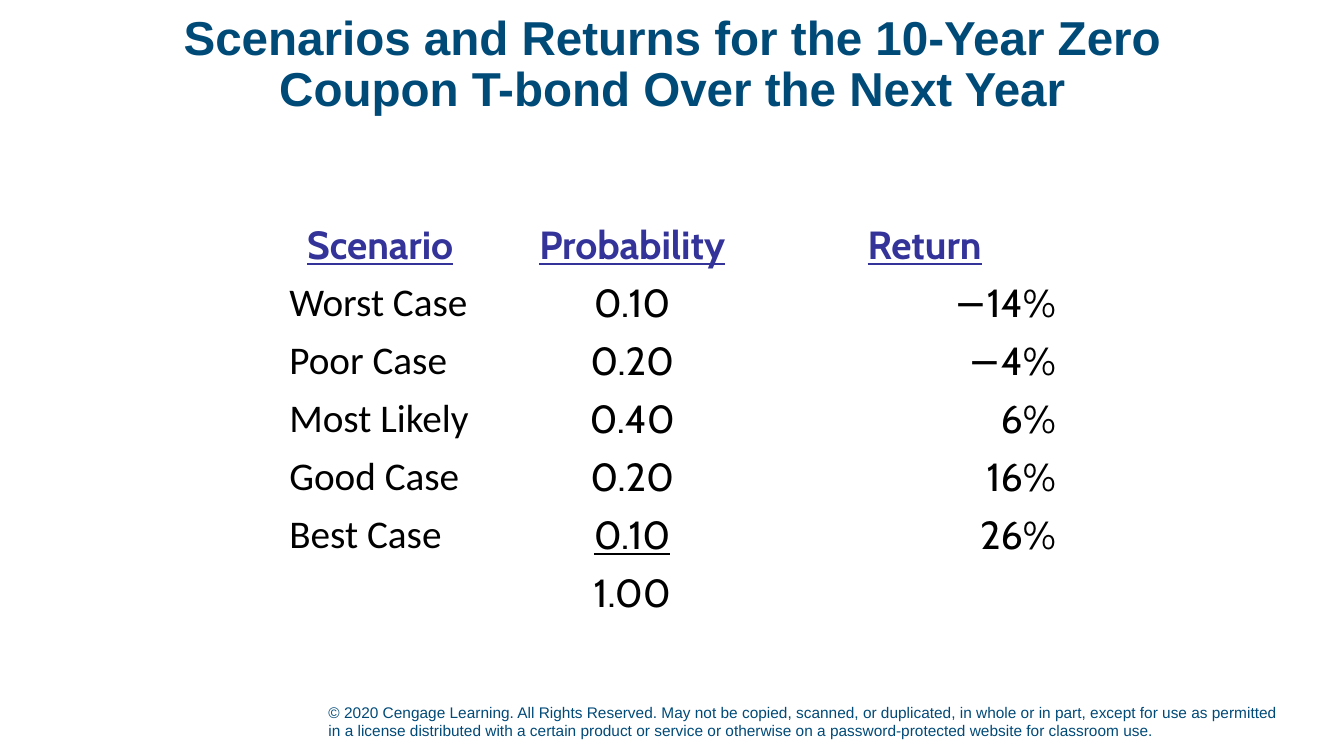
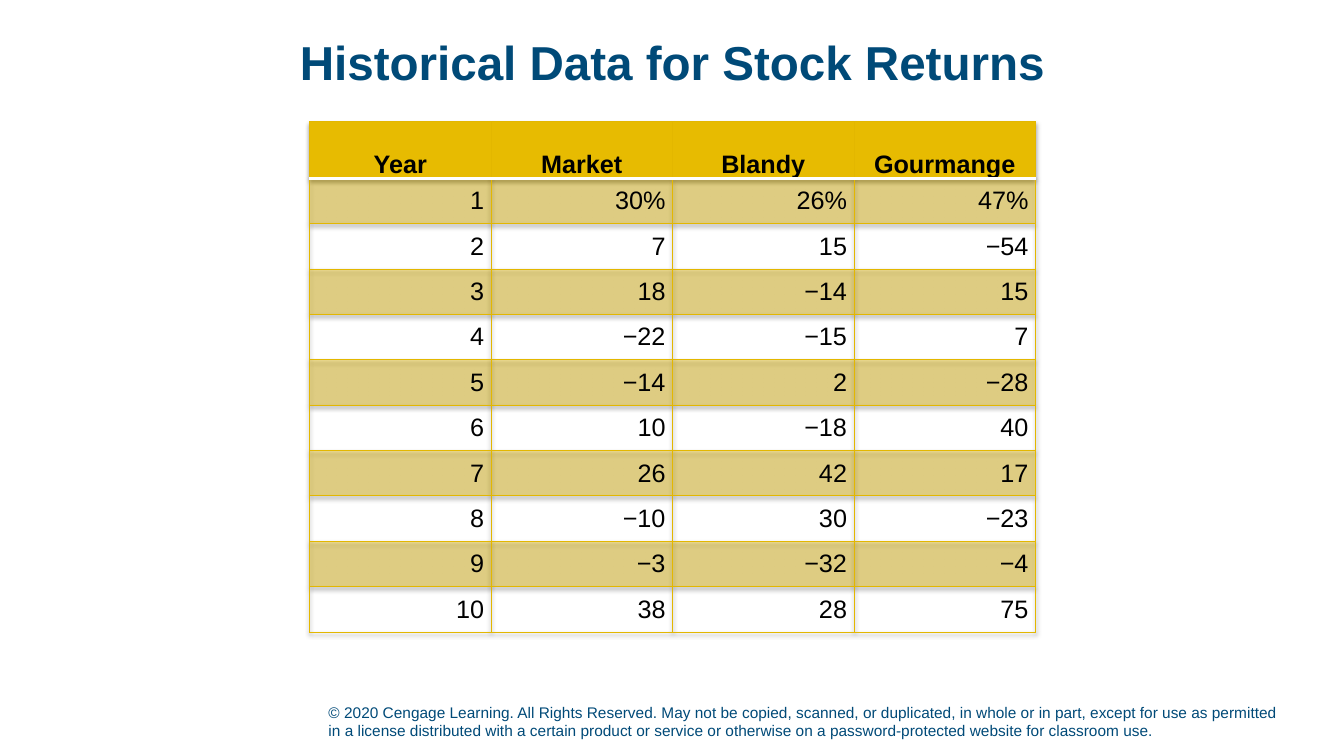
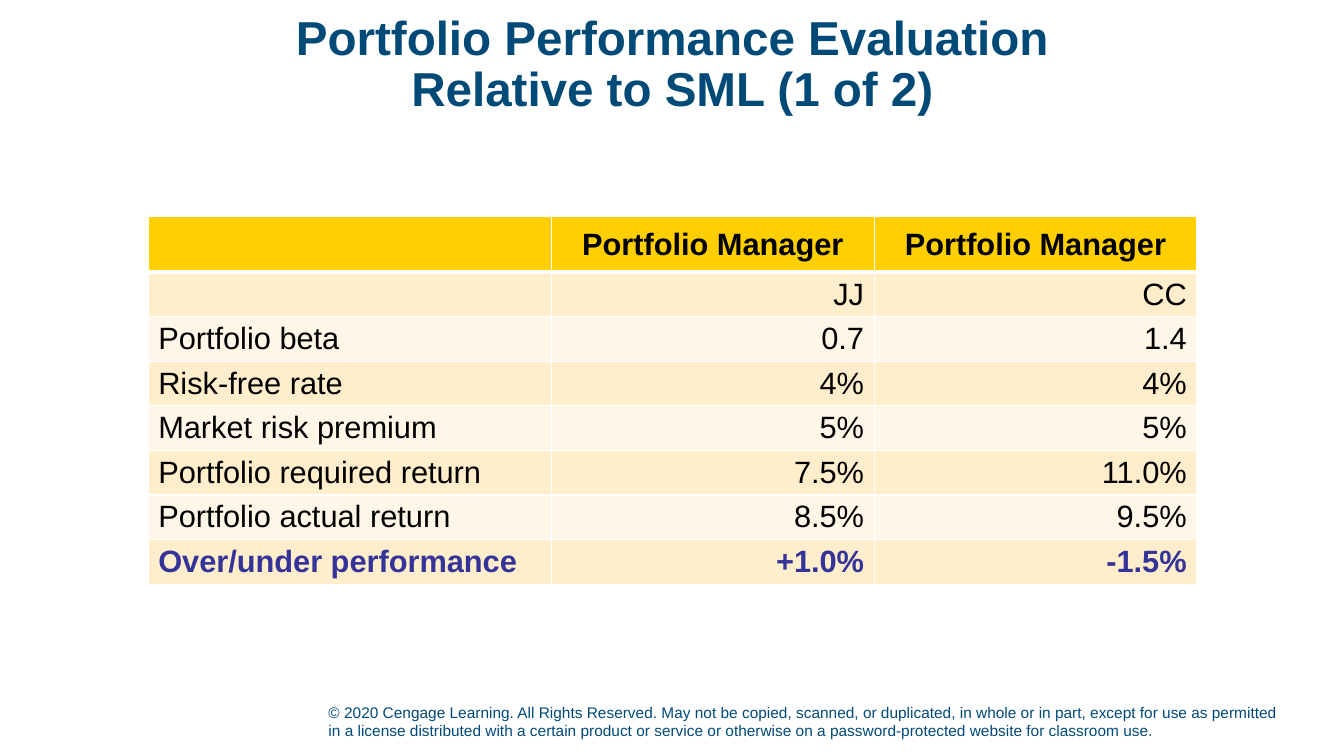
"""Build three slides of return and performance tables."""
import pptx
import pptx.util
import pptx.dml.color
import pptx.enum.text
import pptx.oxml
import pptx.oxml.ns

NAVY, BLUE, BLACK, WHITE = "004A78", "333399", "000000", "FFFFFF"
GOLD, EDGE = "E7BB01", "E3B700"
AMBER, CREAM, PALE = "FFCF01", "FFEDCB", "FFF6E7"

NOTE = ("© 2020 Cengage Learning. All Rights Reserved. May not be copied, scanned, "
        "or duplicated, in whole or in part, except for use as permitted in a license "
        "distributed with a certain product or service or otherwise on a "
        "password-protected website for classroom use.")

SLIDES = [
    dict(
        title="Scenarios and Returns for the 10-Year Zero Coupon T-bond Over the Next Year",
        cells=[
            ("Scenario", "Probability", "Return"),
            ("Worst Case", "0.10", "−14%"),
            ("Poor Case", "0.20", "−4%"),
            ("Most Likely", "0.40", "6%"),
            ("Good Case", "0.20", "16%"),
            ("Best Case", "0.10", "26%"),
            ("", "1.00", ""),
        ],
        spot=(277, 215), widths=(200, 300, 280), head_tall=57, row_tall=57,
        size=28, head_font="Cabin", fonts=("Calibri", "Cabin", "Cabin"), align="lcr",
        accent=0, under={(0, 0), (0, 1), (0, 2), (5, 1)}),
    dict(
        title="Historical Data for Stock Returns",
        cells=[
            ("Year", "Market", "Blandy", "Gourmange"),
            ("1", "30%", "26%", "47%"),
            ("2", "7", "15", "−54"),
            ("3", "18", "−14", "15"),
            ("4", "−22", "−15", "7"),
            ("5", "−14", "2", "−28"),
            ("6", "10", "−18", "40"),
            ("7", "26", "42", "17"),
            ("8", "−10", "30", "−23"),
            ("9", "−3", "−32", "−4"),
            ("10", "38", "28", "75"),
        ],
        spot=(307, 121), widths=(180,) * 4, head_tall=55, row_tall=45,
        size=18, align="rrrr", head_fill=GOLD, bands=(GOLD, None), alpha=40,
        inset=(7, 0), edge=(EDGE, 0.75), rule=(WHITE, 2), lead=2.0, shadow=True),
    dict(
        title="Portfolio Performance Evaluation\vRelative to SML (1 of 2)",
        cells=[
            ("", "Portfolio Manager", "Portfolio Manager"),
            ("", "JJ", "CC"),
            ("Portfolio beta", "0.7", "1.4"),
            ("Risk-free rate", "4%", "4%"),
            ("Market risk premium", "5%", "5%"),
            ("Portfolio required return", "7.5%", "11.0%"),
            ("Portfolio actual return", "8.5%", "9.5%"),
            ("Over/under performance", "+1.0%", "-1.5%"),
        ],
        spot=(147, 215), widths=(400, 320, 320), head_tall=55, row_tall=44,
        size=22, align="lrr", head_fill=AMBER, bands=(CREAM, PALE), accent=7),
]

COMMON = dict(
    head_font="Arial", fonts=("Arial",) * 4, head_fill=None, bands=(None, None),
    alpha=100, inset=(10, 5), edge=(WHITE, 1), rule=(WHITE, 3), lead=1.0,
    accent=None, under=set(), shadow=False)

PX = 9144
WIDE, TALL = 1333, 750
TITLE_BOX = (92, 15, 1150, 100)
NOTE_BOX = (316, 689, 963, 50)

ALIGN = pptx.enum.text.PP_ALIGN
ANCHOR = pptx.enum.text.MSO_ANCHOR
SIDES = {"l": ALIGN.LEFT, "c": ALIGN.CENTER, "r": ALIGN.RIGHT}
NS = pptx.oxml.ns.nsdecls("a")
qn = pptx.oxml.ns.qn

LINE = ('<a:ln{side} {ns} w="{width}"><a:solidFill><a:srgbClr val="{color}"/>'
        '</a:solidFill></a:ln{side}>')
ALPHA = '<a:alpha {ns} val="{value}"/>'
SHADOW = ('<a:effectLst {ns}><a:outerShdw blurRad="40000" dist="23000" dir="5400000" '
          'rotWithShape="0"><a:srgbClr val="000000"><a:alpha val="38000"/></a:srgbClr>'
          '</a:outerShdw></a:effectLst>')


def make(xml, **parts):
    return pptx.oxml.parse_xml(xml.format(ns=NS, **parts))


def rgb(color):
    return pptx.dml.color.RGBColor.from_string(color)


def scale(lengths):
    return [length * PX for length in lengths]


def style(para, face, size, color, bold=False, under=False):
    for run in para.runs:
        font = run.font
        font.name, font.size = face, pptx.util.Pt(size)
        font.bold, font.underline = bold, under
        font.color.rgb = rgb(color)


def draw_edges(prop, row, data):
    for side in "LRTB":
        is_rule = (row, side) in {(0, "B"), (1, "T")}
        color, points = data["rule"] if is_rule else data["edge"]
        width = pptx.util.Pt(points)
        prop.append(make(LINE, side=side, width=width, color=color))


def paint(cell, prop, row, data):
    is_head = row == 0
    color = data["head_fill"] if is_head else data["bands"][(row - 1) % 2]
    if color is None:
        cell.fill.background()
        return
    cell.fill.solid()
    cell.fill.fore_color.rgb = rgb(color)
    if not is_head and data["alpha"] < 100:
        shade = prop.find(qn("a:solidFill")).find(qn("a:srgbClr"))
        shade.append(make(ALPHA, value=data["alpha"] * 1000))


def write(cell, row, col, data):
    is_head, is_accent = row == 0, row == data["accent"]
    side, top = scale(data["inset"])
    cell.margin_left = cell.margin_right = side
    cell.margin_top = cell.margin_bottom = top
    cell.vertical_anchor = ANCHOR.MIDDLE
    cell.text_frame.text = data["cells"][row][col]
    para = cell.text_frame.paragraphs[0]
    para.alignment = ALIGN.CENTER if is_head else SIDES[data["align"][col]]
    if is_head:
        para.line_spacing = data["lead"]
    face = data["head_font"] if is_head else data["fonts"][col]
    color = BLUE if is_accent else BLACK
    style(para, face, data["size"], color,
          bold=is_head or is_accent, under=(row, col) in data["under"])


def add_grid(slide, data):
    widths = data["widths"]
    body = len(data["cells"]) - 1
    heights = [data["head_tall"]] + [data["row_tall"]] * body
    box = scale((*data["spot"], sum(widths), sum(heights)))
    frame = slide.shapes.add_table(len(heights), len(widths), *box)
    table = frame.table
    table.first_row = table.horz_banding = False
    for column, width in zip(table.columns, scale(widths)):
        column.width = width
    for line, height in zip(table.rows, scale(heights)):
        line.height = height

    nodes = frame.element.iter(qn("a:tc"))
    for index, (cell, node) in enumerate(zip(table.iter_cells(), nodes)):
        row, col = divmod(index, len(widths))
        prop = node.get_or_add_tcPr()
        draw_edges(prop, row, data)
        paint(cell, prop, row, data)
        write(cell, row, col, data)

    if data["shadow"]:
        prop = next(frame.element.iter(qn("a:tblPr")))
        prop.insert(0, make(SHADOW))


def add_title(slide, text):
    frame = slide.shapes.title.text_frame
    frame.text = text
    frame.word_wrap, frame.vertical_anchor = True, ANCHOR.MIDDLE
    frame.auto_size = pptx.enum.text.MSO_AUTO_SIZE.NONE
    para = frame.paragraphs[0]
    para.alignment, para.line_spacing = ALIGN.CENTER, 0.9
    style(para, "Arial", 34, NAVY, bold=True)


def share_note(slide, layout):
    note = slide.shapes.add_textbox(*scale(NOTE_BOX))
    frame = note.text_frame
    frame.word_wrap, frame.vertical_anchor = True, ANCHOR.BOTTOM
    frame.text = NOTE
    style(frame.paragraphs[0], "Arial", 11, NAVY)
    layout.shapes.element.append(note.element)


def main():
    deck = pptx.Presentation()
    deck.slide_width, deck.slide_height = scale((WIDE, TALL))
    layout = deck.slide_layouts.get_by_name("Title Only")
    head = layout.placeholders[0]
    head.left, head.top, head.width, head.height = scale(TITLE_BOX)
    for data in SLIDES:
        slide = deck.slides.add_slide(layout)
        add_title(slide, data["title"])
        add_grid(slide, {**COMMON, **data})
    share_note(deck.slides[0], layout)
    deck.save("out.pptx")


if __name__ == "__main__":
    main()
